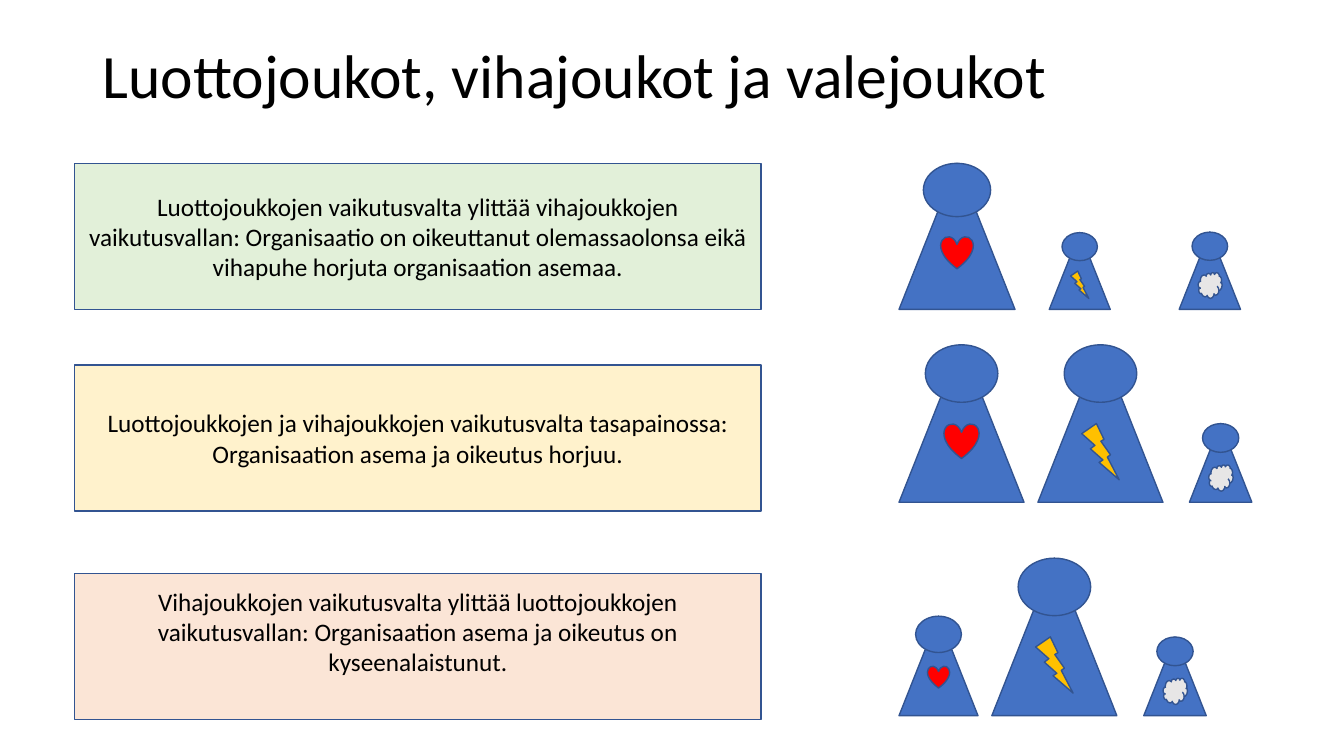
import pptx
import pptx.dml.color
import pptx.enum.shapes
import pptx.enum.text
import pptx.util

Pt = pptx.util.Pt
Shape = pptx.enum.shapes.MSO_SHAPE
Align = pptx.enum.text.PP_ALIGN
Anchor = pptx.enum.text.MSO_ANCHOR

# Symbols on the pawns: preset, fill, then left, top, width, height per pawn width
SYMBOLS = {
    "trust": (Shape.HEART, "FF0000", 0.36, 0.63, 0.28, 0.28),
    "hate": (Shape.LIGHTNING_BOLT, "FFC000", 0.35, 0.63, 0.3, 0.45),
    "fake": (Shape.CLOUD, "E7E6E6", 0.31, 0.66, 0.39, 0.42),
}

# Each row: box top, box fill, text, extra space below text, pawn baseline, pawns
# Each pawn: symbol, left, width
ROWS = [
    (116.6, "E2F0D9",
     "Luottojoukkojen vaikutusvalta ylittää vihajoukkojen vaikutusvallan: "
     "Organisaatio on oikeuttanut olemassaolonsa eikä vihapuhe horjuta "
     "organisaation asemaa.", 0, 221,
     [("trust", 642.2, 82.8), ("hate", 749.5, 43.5), ("fake", 842.3, 43.8)]),
    (260.6, "FFF2CC",
     "Luottojoukkojen ja vihajoukkojen vaikutusvalta tasapainossa: "
     "Organisaation asema ja oikeutus horjuu.", 0, 358.8,
     [("trust", 642.2, 89.3), ("hate", 741.4, 89.3), ("fake", 849.6, 44.6)]),
    (409.7, "FBE5D6",
     "Vihajoukkojen vaikutusvalta ylittää luottojoukkojen vaikutusvallan: "
     "Organisaation asema ja oikeutus on kyseenalaistunut.", 21.6, 511.2,
     [("trust", 642.2, 56.4), ("hate", 708.5, 89.3), ("fake", 817, 44.6)]),
]


def color(hex_text):
    return pptx.dml.color.RGBColor.from_string(hex_text)


class SlideBuilder:
    FONT = "Calibri"
    TEXT = "000000"
    PAWN = "4472C4"
    OUTLINE = "325491"

    def __init__(self, slide):
        self.slide = slide

    def format_paragraph(self, paragraph, size, alignment):
        paragraph.alignment = alignment
        paragraph.font.name = self.FONT
        paragraph.font.size = Pt(size)
        paragraph.font.color.rgb = color(self.TEXT)

    def title(self, text, left, top, width, height):
        title = self.slide.shapes.title
        title.left, title.top = Pt(left), Pt(top)
        title.width, title.height = Pt(width), Pt(height)
        frame = title.text_frame
        frame.text = text
        frame.vertical_anchor = Anchor.TOP
        frame.paragraphs[0].line_spacing = 0.9
        self.format_paragraph(frame.paragraphs[0], 44, Align.LEFT)

    def shape(self, shapes, preset, fill, left, top, width, height):
        shape = shapes.add_shape(preset, Pt(left), Pt(top), Pt(width), Pt(height))
        shape.shadow.inherit = False
        shape.fill.solid()
        shape.fill.fore_color.rgb = color(fill)
        shape.line.color.rgb = color(self.OUTLINE)
        shape.line.width = Pt(1)
        return shape

    def pawn(self, shapes, symbol, left, baseline, width):
        height = 1.26 * width
        top = baseline - height
        self.shape(shapes, Shape.FLOWCHART_EXTRACT, self.PAWN, left, top, width, height)
        self.shape(shapes, Shape.FLOWCHART_CONNECTOR, self.PAWN,
                   left + 0.21 * width, top, 0.58 * width, 0.46 * width)
        preset, fill, x, y, symbol_width, symbol_height = SYMBOLS[symbol]
        self.shape(shapes, preset, fill, left + x * width, top + y * width,
                   symbol_width * width, symbol_height * width)

    def pawn_row(self, baseline, pawns):
        group = self.slide.shapes.add_group_shape()
        for symbol, left, width in pawns:
            self.pawn(group.shapes, symbol, left, baseline, width)

    def text_box(self, text, fill, top, space_below):
        box = self.shape(self.slide.shapes, Shape.RECTANGLE, fill,
                         53.3, top, 490.3, 104.4)
        frame = box.text_frame
        frame.word_wrap = True
        frame.vertical_anchor = Anchor.MIDDLE
        frame.margin_bottom = Pt(3.6 + space_below)
        frame.text = text
        self.format_paragraph(frame.paragraphs[0], 18, Align.CENTER)


def main():
    presentation = pptx.Presentation()
    presentation.slide_width, presentation.slide_height = Pt(960), Pt(540)
    slide = presentation.slides.add_slide(presentation.slide_layouts[5])
    builder = SlideBuilder(slide)

    # Title
    builder.title("Luottojoukot, vihajoukot ja valejoukot", 66, 28.8, 828, 104.4)

    # Text boxes with their pawns
    for top, fill, text, space_below, baseline, pawns in ROWS:
        builder.pawn_row(baseline, pawns)
        builder.text_box(text, fill, top, space_below)

    presentation.save("out.pptx")


if __name__ == "__main__":
    main()
